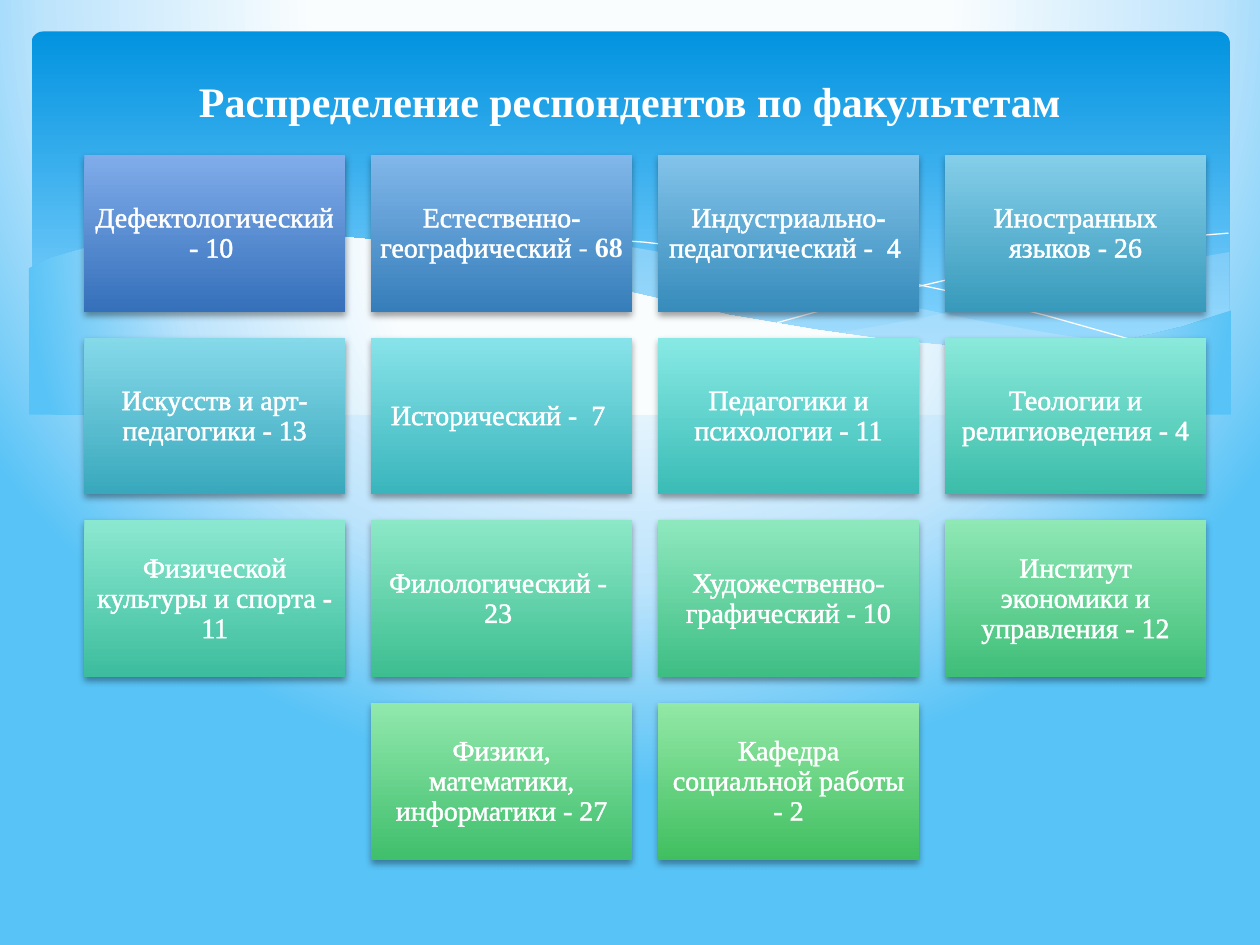
import pptx
import pptx.util
import pptx.dml.color
import pptx.enum.shapes
import pptx.enum.text
import pptx.oxml
import pptx.oxml.ns

Pt = pptx.util.Pt
RGBColor = pptx.dml.color.RGBColor
qn = pptx.oxml.ns.qn
NS = pptx.oxml.ns.nsdecls("a")
FONT = "Times New Roman"
WHITE = RGBColor(0xFF, 0xFF, 0xFF)
MIST = RGBColor(0xC6, 0xE7, 0xFC)
SKY = [(40, RGBColor(0xFA, 0xFD, 0xFE)), (74, RGBColor(0xBE, 0xE4, 0xFC)),
       (100, RGBColor(0x58, 0xC3, 0xF6))]
PANEL = [(0, RGBColor(0x02, 0x93, 0xE0)), (90, RGBColor(0x83, 0xD3, 0xFE))]
GLOW = ('<a:path path="circle"><a:fillToRect l="20000" t="-40000" '
        'r="20000" b="140000"/></a:path>')
DOWN = '<a:lin ang="5400000" scaled="0"/>'

FACULTIES = [
    ("Дефектологический - 10 ", "80ACEA", "3570BA"),
    ("Естественно-географический", "81B7EA", "367EBA"),
    ("Индустриально-педагогический -  4 ", "82C3EA", "378CBB"),
    ("Иностранных языков - 26", "84CEE9", "389ABB"),
    ("Искусств и арт-педагогики - 13", "85D9E9", "39A8BC"),
    ("Исторический -  7 ", "87E3E9", "3AB5BC"),
    ("Педагогики и психологии - 11", "88E9E4", "3BBCB6"),
    ("Теологии и религиоведения - 4", "8AE9DA", "3CBDAA"),
    ("Физической культуры и спорта - 11", "8BE8D0", "3CBD9D"),
    ("Филологический -  23 ", "8CE8C7", "3DBE91"),
    ("Художественно-графический - 10", "8EE8BE", "3EBE84"),
    ("Институт экономики и управления - 12", "8FE8B5", "3FBE78"),
    ("Физики, математики, информатики - 27", "91E8AD", "40BF6C"),
    ("Кафедра социальной работы - 2", "92E8A6", "41BF60"),
]

RIGHT_WAVE = [
    (686, 11.5), (657, 16.6), (625, 23), (603, 28), (563, 38), (526, 46),
    (492, 52.6), (459, 58.3), (491, 62.6), (520, 65.5), (546, 67),
    (569.5, 67.7), (591, 67), (618, 64), (641, 60), (662, 54), (686, 45.4)]
MIDDLE_WAVE = [
    (626, 64), (586, 58.3), (541, 50.4), (492, 40.3), (436, 27.4),
    (404, 19.4), (373, 13.7), (335.5, 7.2), (302, 3.6), (271, 1.4),
    (243, 0.7), (220, 2.2), (189, 5), (230, 10.8), (274, 19.4), (307, 27.4),
    (365, 40.3), (416, 51), (462, 59), (503, 64.8), (540, 67), (572, 67.7),
    (600.5, 67)]
LONG_LINE = [
    (206, 8), (231, 4.3), (272, 2.2), (307, 2.9), (351, 5.8), (402.5, 11.5),
    (441, 17.3), (484, 25), (531, 35), (582, 48), (636.5, 63.4)]
SHORT_LINE = [
    (425, 52.6), (467, 41), (522, 28), (585, 14.4), (628, 7.2), (659, 2.9),
    (685.5, 0.7)]
FRONT_WAVE = [
    (687, 45), (660, 54), (631, 61), (595, 66), (566, 67), (531, 65.5),
    (493, 62), (450, 56), (400, 47.5), (346, 35), (305, 26), (265, 16.5),
    (228, 9.4), (194, 4.3), (163, 1.4), (135, 0), (111, 0), (78.5, 1.4),
    (52, 5), (32, 9.4), (12, 15), (0, 21)]


def set_gradient(fill, props, stops, direction):
    """Fill the owner of props with a gradient."""
    fill.solid()
    gs = "".join(f'<a:gs pos="{pos * 1000}"><a:srgbClr val="{color}"/></a:gs>'
                 for pos, color in stops)
    grad = pptx.oxml.parse_xml(
        f'<a:gradFill {NS} rotWithShape="1"><a:gsLst>{gs}</a:gsLst>'
        f'{direction}</a:gradFill>')
    props.replace(props.find(qn("a:solidFill")), grad)


def add_text(p, text, size=16, bold=False, outline=False):
    """Append a white run to a centred paragraph."""
    p.alignment = pptx.enum.text.PP_ALIGN.CENTER
    r = p.add_run()
    r.text = text
    r.font.name, r.font.size, r.font.bold = FONT, Pt(size), bold
    r.font.color.rgb = WHITE
    if outline:
        r.font._element.insert(0, pptx.oxml.parse_xml(
            f'<a:ln {NS} w="18415"><a:solidFill><a:srgbClr val="{WHITE}"/>'
            '</a:solidFill></a:ln>'))


def add_curve(s, box, points, closed=True):
    """Draw an outline whose points are offsets from the box corner."""
    pts = [(Pt(box[0] + x), Pt(box[1] + y)) for x, y in points]
    builder = s.shapes.build_freeform(*pts[0], scale=1.0)
    builder.add_line_segments(pts[1:], close=closed)
    sp = builder.convert_to_shape()
    sp.shadow.inherit = False
    sp.fill.background()
    sp.line.fill.background()
    return sp


def add_panel(s, box):
    """Draw the rounded blue panel."""
    sp = s.shapes.add_shape(pptx.enum.shapes.MSO_SHAPE.ROUNDED_RECTANGLE,
                            *map(Pt, box))
    sp.adjustments[0] = 0.034
    sp.shadow.inherit = False
    sp.line.fill.background()
    set_gradient(sp.fill, sp._element.spPr, PANEL, DOWN)


def add_waves(s, box):
    """Draw the overlapping waves along the foot of the panel."""
    for points, opacity in ((RIGHT_WAVE, 29), (MIDDLE_WAVE, 40)):
        sp = add_curve(s, box, points)
        sp.fill.solid()
        sp.fill.fore_color.rgb = MIST
        color = sp._element.spPr.find(qn("a:solidFill"))[0]
        color.append(pptx.oxml.parse_xml(
            f'<a:alpha {NS} val="{opacity * 1000}"/>'))
    for points in (LONG_LINE, SHORT_LINE):
        sp = add_curve(s, box, points, closed=False)
        sp.line.color.rgb = WHITE
        sp.line.width = Pt(0)
    foot = [(0, box[3]), (box[2], box[3])]
    sp = add_curve(s, box, FRONT_WAVE + foot)
    set_gradient(sp.fill, sp._element.spPr, SKY, GLOW)


def add_title(s, box, text):
    """Place the slide heading."""
    tf = s.shapes.add_textbox(*map(Pt, box)).text_frame
    tf.word_wrap = True
    tf.vertical_anchor = pptx.enum.text.MSO_ANCHOR.MIDDLE
    add_text(tf.paragraphs[0], text, size=24, bold=True)


def add_tile(s, box, text, top, bottom):
    """Draw one faculty tile with its caption."""
    sp = s.shapes.add_shape(pptx.enum.shapes.MSO_SHAPE.RECTANGLE,
                            *map(Pt, box))
    sp.line.fill.background()
    stops = [(0, RGBColor.from_string(top)), (100, RGBColor.from_string(bottom))]
    set_gradient(sp.fill, sp._element.spPr, stops, DOWN)
    sp.shadow.inherit = False
    sp._element.spPr.find(qn("a:effectLst")).append(pptx.oxml.parse_xml(
        f'<a:outerShdw {NS} blurRad="50800" dist="25400" dir="5400000" '
        'rotWithShape="0"><a:srgbClr val="000000"><a:alpha val="38000"/>'
        '</a:srgbClr></a:outerShdw>'))
    tf = sp.text_frame
    tf.word_wrap = True
    tf.vertical_anchor = pptx.enum.text.MSO_ANCHOR.MIDDLE
    tf.margin_left = tf.margin_right = tf.margin_top = tf.margin_bottom = Pt(5)
    p = tf.paragraphs[0]
    p.line_spacing = 0.9
    add_text(p, text, outline=True)
    return p


def add_faculties(s, box, cols=4, gap=14.9):
    """Lay the tiles out in rows, with the last row centred."""
    x, y, w, h = box
    rows = -(-len(FACULTIES) // cols)
    tile_w = (w - gap * (cols - 1)) / cols
    tile_h = (h - gap * (rows - 1)) / rows
    for i, (text, top, bottom) in enumerate(FACULTIES):
        row, col = divmod(i, cols)
        count = min(cols, len(FACULTIES) - row * cols)
        left = x + (col + (cols - count) / 2) * (tile_w + gap)
        p = add_tile(s, (left, y + row * (tile_h + gap), tile_w, tile_h),
                     text, top, bottom)
        if i == 1:
            add_text(p, " - ")
            add_text(p, "68", bold=True)


def main():
    """Build the slide and save it."""
    prs = pptx.Presentation()
    prs.slide_width, prs.slide_height = Pt(720), Pt(540)
    s = prs.slides.add_slide(prs.slide_layouts[6])
    fill = s.background.fill
    fill.solid()
    set_gradient(fill, s._element.find(".//" + qn("p:bgPr")), SKY, GLOW)
    add_panel(s, (18, 18, 684.7, 194.4))
    add_waves(s, (16.5, 132.5, 687, 104.4))
    add_title(s, (36, 26.6, 648, 62), "Распределение респондентов по факультетам")
    add_faculties(s, (48.2, 88.6, 640.9, 402.7))
    prs.save("out.pptx")


if __name__ == "__main__":
    main()
